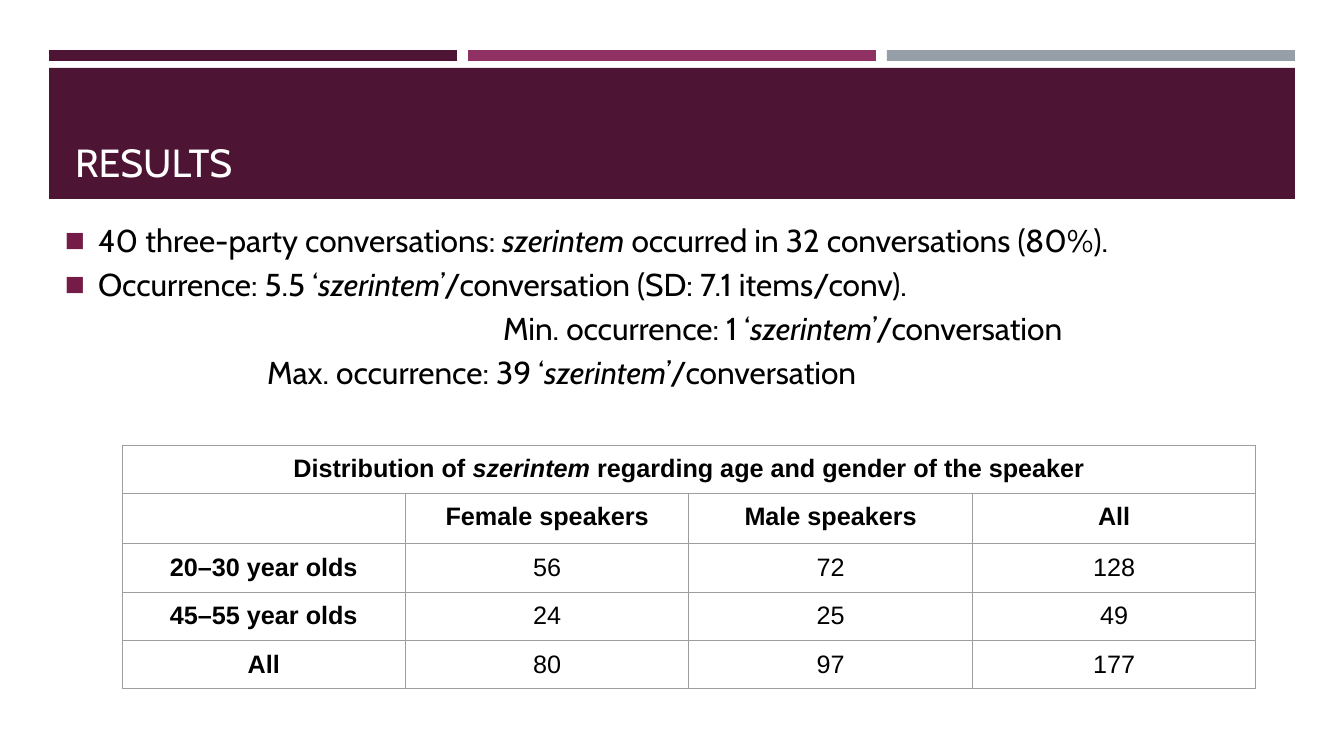
from lxml import etree
from pptx import Presentation
from pptx.dml.color import RGBColor
from pptx.enum.shapes import MSO_SHAPE
from pptx.enum.text import MSO_ANCHOR, MSO_AUTO_SIZE, PP_ALIGN
from pptx.oxml.ns import qn
from pptx.util import Pt

COLORS = {
    "plum": "4D1434", "magenta": "903163", "grey": "969FA7",
    "bullet": "741B47", "border": "9E9E9E", "text": "000000", "white": "FFFFFF",
}
TITLE = "RESULTS"
# Each line: left margin in px, bulleted or not, text with *italics* marked
RESULTS = [
    (33, True, "40 three-party conversations: *szerintem *occurred in 32 conversations (80%)."),
    (33, True, "Occurrence: 5.5 ‘*szerintem*’/conversation (SD: 7.1 items/conv)."),
    (438, False, "Min. occurrence: 1 ‘*szerintem*’/conversation"),
    (202, False, "Max. occurrence: 39 ‘*szerintem*’/conversation"),
]
TABLE_TITLE = "Distribution of *szerintem *regarding age and gender of the speaker"
TABLE_ROWS = [
    ("", "Female speakers", "Male speakers", "All"),
    ("20–30 year olds", "56", "72", "128"),
    ("45–55 year olds", "24", "25", "49"),
    ("All", "80", "97", "177"),
]
BAR_COLORS = ["plum", "magenta", "grey"]
BAR_LEFT, BAR_TOP, BAR_WIDTH, BAR_HEIGHT, BAR_PITCH = 49, 50, 408, 11, 419
TABLE_LEFT, TABLE_TOP, TABLE_WIDTH, ROW_HEIGHT = 122, 445, 1134, 48
CELL_INSET = 10


def px(length):
    return round(length * 914400 / 100.8)


def rgb(name):
    return RGBColor.from_string(COLORS[name])


def place(shape, left, top, width, height):
    shape.left, shape.top = px(left), px(top)
    shape.width, shape.height = px(width), px(height)


def write(paragraph, text, font="Cabin", size=22.6, color="text", bold=False, align=PP_ALIGN.LEFT):
    """Fill a paragraph; parts between asterisks become italic."""
    paragraph.alignment = align
    for index, part in enumerate(text.split("*")):
        if not part:
            continue
        run = paragraph.add_run()
        run.text = part
        run.font.name, run.font.size = font, Pt(size)
        run.font.bold, run.font.italic = bold, index % 2 == 1
        run.font.color.rgb = rgb(color)


def add_bar(slide, left, top, width, height, color):
    bar = slide.shapes.add_shape(MSO_SHAPE.RECTANGLE, px(left), px(top), px(width), px(height))
    bar.shadow.inherit = False
    bar.fill.solid()
    bar.fill.fore_color.rgb = rgb(color)
    bar.line.fill.background()
    # Bars lie behind the placeholders
    slide.shapes._spTree.remove(bar._element)
    slide.shapes._spTree.insert(2, bar._element)


def set_bullet(paragraph, margin, bulleted):
    properties = paragraph._p.get_or_add_pPr()
    properties.set("marL", str(px(margin)))
    properties.set("indent", str(-px(margin) if bulleted else 0))
    if not bulleted:
        etree.SubElement(properties, qn("a:buNone"))
        return
    color = etree.SubElement(properties, qn("a:buClr"))
    etree.SubElement(color, qn("a:srgbClr"), val=COLORS["bullet"])
    etree.SubElement(properties, qn("a:buFont"), typeface="Arial")
    etree.SubElement(properties, qn("a:buChar"), char="◼")


def set_borders(cell):
    properties = cell._tc.get_or_add_tcPr()
    for index, side in enumerate(("a:lnL", "a:lnR", "a:lnT", "a:lnB")):
        line = etree.Element(qn(side), w=str(Pt(0.75)))
        fill = etree.SubElement(line, qn("a:solidFill"))
        etree.SubElement(fill, qn("a:srgbClr"), val=COLORS["border"])
        properties.insert(index, line)


def add_title(slide):
    title = slide.shapes.title
    place(title, 65, 78, 1216, 112)
    title.text_frame.auto_size = MSO_AUTO_SIZE.NONE
    title.text_frame.vertical_anchor = MSO_ANCHOR.BOTTOM
    write(title.text_frame.paragraphs[0], TITLE, size=28, color="white")


def add_results(slide):
    body = slide.placeholders[1]
    place(body, 55, 208, 1170, 203)
    frame = body.text_frame
    frame.auto_size = MSO_AUTO_SIZE.NONE
    frame.vertical_anchor = MSO_ANCHOR.MIDDLE
    for index, (margin, bulleted, text) in enumerate(RESULTS):
        paragraph = frame.add_paragraph() if index else frame.paragraphs[0]
        paragraph.line_spacing = 0.8
        paragraph.space_before = Pt(9.6)
        set_bullet(paragraph, margin, bulleted)
        write(paragraph, text)


def add_distribution(slide):
    rows = [(TABLE_TITLE, "", "", "")] + TABLE_ROWS
    columns = len(rows[0])
    table = slide.shapes.add_table(
        len(rows), columns, px(TABLE_LEFT), px(TABLE_TOP),
        px(TABLE_WIDTH), px(ROW_HEIGHT * len(rows))).table
    table.first_row = table.horz_banding = False
    for column in table.columns:
        column.width = px(TABLE_WIDTH / columns)
    for row_index, row in enumerate(rows):
        table.rows[row_index].height = px(ROW_HEIGHT)
        for column_index, text in enumerate(row):
            cell = table.cell(row_index, column_index)
            cell.fill.background()
            cell.margin_left = cell.margin_right = px(CELL_INSET)
            cell.margin_top = cell.margin_bottom = px(CELL_INSET)
            set_borders(cell)
            header = row_index < 2 or column_index == 0
            write(cell.text_frame.paragraphs[0], text, font="Arial", size=18,
                  bold=header, align=PP_ALIGN.CENTER)
    table.cell(0, 0).merge(table.cell(0, columns - 1))


def main():
    presentation = Presentation()
    presentation.slide_width, presentation.slide_height = px(1344), px(756)
    slide = presentation.slides.add_slide(presentation.slide_layouts[1])
    for index, color in enumerate(BAR_COLORS):
        add_bar(slide, BAR_LEFT + index * BAR_PITCH, BAR_TOP, BAR_WIDTH, BAR_HEIGHT, color)
    add_bar(slide, 49, 68, 1246, 131, "plum")
    add_title(slide)
    add_results(slide)
    add_distribution(slide)
    presentation.save("out.pptx")


if __name__ == "__main__":
    main()
